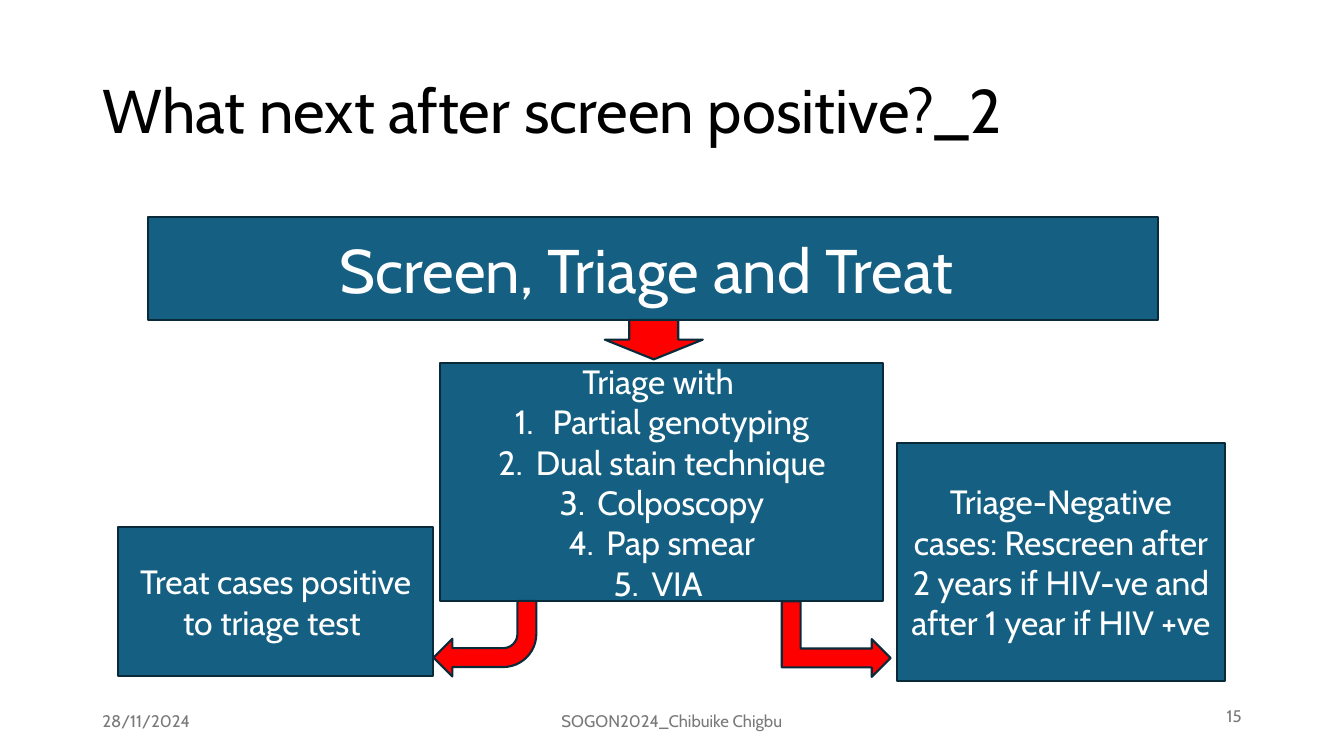
from lxml.etree import SubElement as Sub
from pptx import Presentation
from pptx.dml.color import RGBColor
from pptx.enum.shapes import MSO_SHAPE as Kind
from pptx.enum.text import MSO_ANCHOR as Anchor, MSO_AUTO_SIZE as Fit, PP_ALIGN as Align
from pptx.oxml.ns import qn
from pptx.util import Pt

FONT = "Cabin"
BLACK = RGBColor(0x00, 0x00, 0x00)
WHITE = RGBColor(0xFF, 0xFF, 0xFF)
BLUE = RGBColor(0x15, 0x60, 0x82)
NAVY = RGBColor(0x09, 0x2A, 0x39)
RED = RGBColor(0xFF, 0x00, 0x00)
GREY = RGBColor(0x79, 0x79, 0x79)

TESTS = ["Partial genotyping", "Dual stain technique", "Colposcopy", "Pap smear", "VIA "]


def points(*sizes):
    return [Pt(size) for size in sizes]


def add_run(para, text, size, color, align):
    para.alignment = align
    run = para.add_run()
    run.text = text
    run.font.name = FONT
    run.font.size = Pt(size)
    run.font.color.rgb = color


def set_frame(frame):
    frame.word_wrap = True
    frame.auto_size = Fit.NONE
    frame.vertical_anchor = Anchor.MIDDLE


def add_title(slide, text):
    title = slide.shapes.title
    title.left, title.top, title.width, title.height = points(66, 28.75, 828, 104.4)
    set_frame(title.text_frame)
    para = title.text_frame.paragraphs[0]
    para.line_spacing = 0.9
    add_run(para, text, 44, BLACK, Align.LEFT)


def add_block(slide, kind, area, fill, turn=0):
    shape = slide.shapes.add_shape(kind, *points(*area))
    shape.shadow.inherit = False
    shape.rotation = turn
    shape.fill.solid()
    shape.fill.fore_color.rgb = fill
    shape.line.color.rgb = NAVY
    shape.line.width = Pt(1.5)
    return shape


def add_box(slide, area, text, size=24):
    frame = add_block(slide, Kind.RECTANGLE, area, BLUE).text_frame
    set_frame(frame)
    add_run(frame.paragraphs[0], text, size, WHITE, Align.CENTER)
    return frame


def add_item(frame, text):
    para = frame.add_paragraph()
    add_run(para, text, 24, WHITE, Align.CENTER)
    props = para._p.get_or_add_pPr()
    props.set("marL", str(Pt(27)))
    props.set("indent", str(-Pt(27)))
    Sub(props, qn("a:buFont"), typeface="+mj-lt")
    Sub(props, qn("a:buAutoNum"), type="arabicPeriod")


def add_note(slide, area, text, align):
    frame = slide.shapes.add_textbox(*points(*area)).text_frame
    set_frame(frame)
    add_run(frame.paragraphs[0], text, 12, GREY, align)


def main():
    deck = Presentation()
    deck.slide_width, deck.slide_height = points(960, 540)
    slide = deck.slides.add_slide(deck.slide_layouts[5])

    add_title(slide, "What next after screen positive?_2")
    add_box(slide, (106, 155.2, 721.5, 73.7), "Screen, Triage and Treat ", 44)
    triage = add_box(slide, (314.5, 259.2, 316.5, 170), "Triage with ")
    for test in TESTS:
        add_item(triage, test)
    add_box(slide, (84.3, 376.5, 225.3, 106.5), "Treat cases positive to triage test ")
    add_block(slide, Kind.BENT_ARROW, (309.6, 429.2, 73.5, 54), RED, 180)
    add_block(slide, Kind.DOWN_ARROW, (432, 228.5, 70, 28.2), RED)
    add_box(slide, (640.8, 316.3, 234, 170),
            "Triage-Negative cases: Rescreen after 2 years if HIV-ve and after 1 year if HIV +ve")
    add_block(slide, Kind.BENT_UP_ARROW, (570.3, 417.6, 54, 77.8), RED, 90)

    add_note(slide, (66, 500.5, 216, 28.75), "28/11/2024", Align.LEFT)
    add_note(slide, (318, 500.5, 324, 28.75), "SOGON2024_Chibuike Chigbu", Align.CENTER)
    add_note(slide, (678, 497, 216, 28.75), "15", Align.RIGHT)
    deck.save("out.pptx")


if __name__ == "__main__":
    main()
